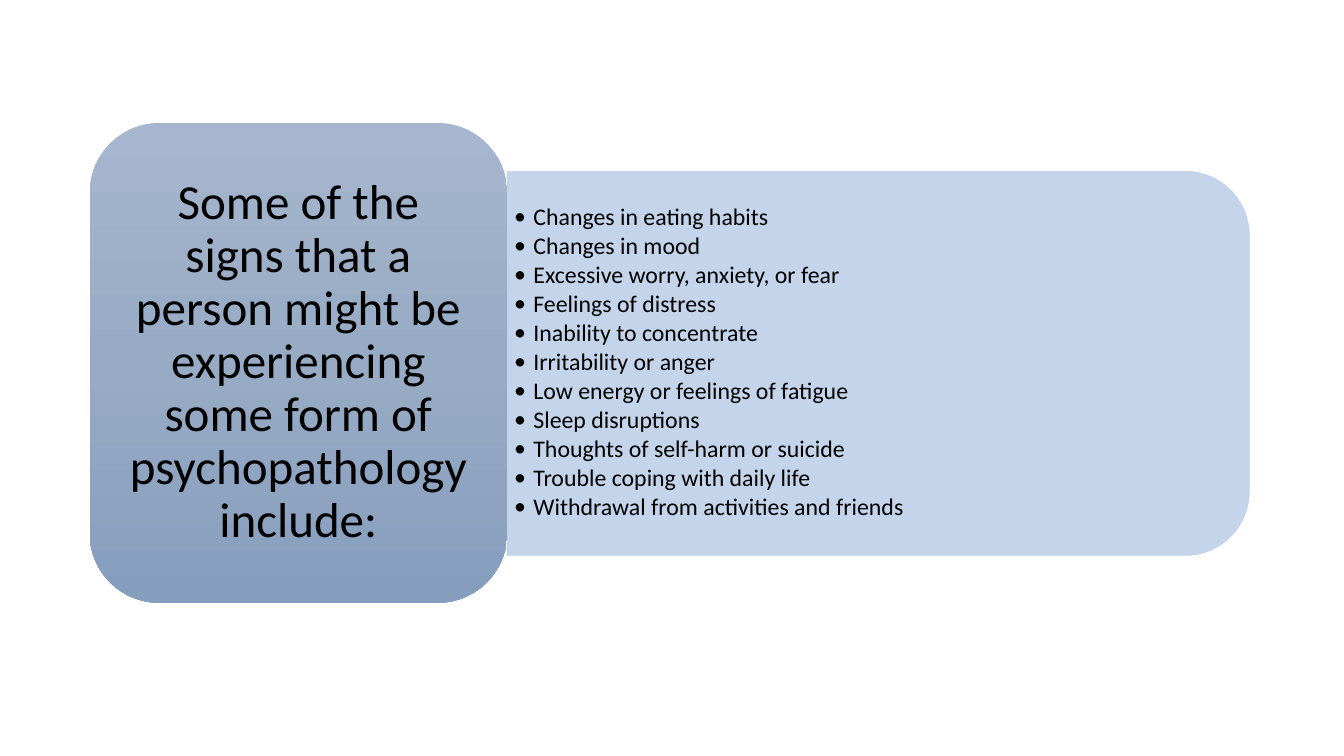
from copy import deepcopy

from pptx import Presentation
from pptx.dml.color import RGBColor
from pptx.enum.shapes import MSO_SHAPE
from pptx.enum.text import MSO_ANCHOR, MSO_AUTO_SIZE, PP_ALIGN
from pptx.oxml.ns import qn
from pptx.util import Inches, Pt
from lxml import etree

ROUNDED = MSO_SHAPE.ROUNDED_RECTANGLE
ROUND_TOP = MSO_SHAPE.ROUND_2_SAME_RECTANGLE
MIDDLE = MSO_ANCHOR.MIDDLE
NO_FIT = MSO_AUTO_SIZE.NONE
LEFT, CENTER = PP_ALIGN.LEFT, PP_ALIGN.CENTER

HEADING = ("Some of the signs that a person might be experiencing "
           "some form of psychopathology include:")
SIGNS = [
    "Changes in eating habits",
    "Changes in mood",
    "Excessive worry,\u00a0anxiety, or fear",
    "Feelings of distress",
    "Inability to concentrate",
    "Irritability or anger",
    "Low energy or feelings of fatigue",
    "Sleep disruptions",
    "Thoughts of\u00a0self-harm\u00a0or suicide",
    "Trouble coping with daily life",
    "Withdrawal from activities and friends",
]
COLORS = {"text": "000000", "panel": "BDD0E9",
          "card_top": "A5B6CE", "card_middle": "98ABC4", "card_bottom": "869EBE"}
FONT = "Calibri"
PANEL_ALPHA = 90
BULLET_INDENT = 0.19

# left, top, width, height in inches
CARD = (0.89, 1.22, 4.14, 4.76)
CARD_TEXT = (1.09, 1.42, 3.74, 4.35)
PANEL = (5.03, 1.7, 7.36, 3.81)
PANEL_TEXT = (5.03, 1.88, 7.17, 3.44)


def rgb(name):
    return RGBColor.from_string(COLORS[name])


def add_backdrop(slide, kind, area):
    """Add a preset shape behind the placeholders."""
    shape = slide.shapes.add_shape(kind, *map(Inches, area))
    shape.shadow.inherit = False
    slide.shapes.title._element.addprevious(shape._element)
    return shape


def add_panel(slide):
    left, top, width, height = PANEL
    # A quarter turn about the centre swaps width and height.
    upright = (left + (width - height) / 2, top + (height - width) / 2, height, width)
    panel = add_backdrop(slide, ROUND_TOP, upright)
    panel.rotation = 90
    panel.fill.solid()
    panel.fill.fore_color.rgb = rgb("panel")
    panel.line.color.rgb = rgb("panel")
    panel.line.width = Pt(0.5)
    for color in panel._element.spPr.iter(qn("a:srgbClr")):
        etree.SubElement(color, qn("a:alpha")).set("val", str(PANEL_ALPHA * 1000))


def add_card(slide):
    card = add_backdrop(slide, ROUNDED, CARD)
    card.line.fill.background()
    card.fill.gradient()
    card.fill.gradient_angle = 270
    first = card._element.spPr.find(".//" + qn("a:gs"))
    first.addnext(deepcopy(first))
    names = ("card_top", "card_middle", "card_bottom")
    for index, (stop, name) in enumerate(zip(card.fill.gradient_stops, names)):
        stop.position = index / 2
        stop.color.rgb = rgb(name)


def add_bullet(para):
    properties = para._p.get_or_add_pPr()
    properties.set("marL", str(Inches(BULLET_INDENT)))
    properties.set("indent", str(-Inches(BULLET_INDENT)))
    etree.SubElement(properties, qn("a:buFont")).set("typeface", FONT)
    etree.SubElement(properties, qn("a:buChar")).set("char", "•")


def fill_text(box, area, lines, size, align, margins, after=0, bullets=False):
    box.left, box.top, box.width, box.height = map(Inches, area)
    frame = box.text_frame
    frame.text = "\n".join(lines)
    frame.word_wrap = True
    frame.auto_size = NO_FIT
    frame.vertical_anchor = MIDDLE
    frame.margin_left = frame.margin_right = Inches(margins[0])
    frame.margin_top = frame.margin_bottom = Inches(margins[1])
    for para in frame.paragraphs:
        if bullets:
            add_bullet(para)
        para.alignment = align
        para.line_spacing = 0.9
        para.space_before = Pt(0)
        para.space_after = Pt(after)
        for span in para.runs:
            span.font.name = FONT
            span.font.size = Pt(size)
            span.font.color.rgb = rgb("text")


def main():
    deck = Presentation()
    deck.slide_width, deck.slide_height = Inches(13.33), Inches(7.5)
    slide = deck.slides.add_slide(deck.slide_layouts[1])
    add_panel(slide)
    add_card(slide)
    fill_text(slide.shapes.title, CARD_TEXT, [HEADING], size=35, align=CENTER,
              margins=(0.15, 0.07))
    fill_text(slide.placeholders[1], PANEL_TEXT, SIGNS, size=17, align=LEFT,
              margins=(0.07, 0.04), after=2.3, bullets=True)
    deck.save("out.pptx")


if __name__ == "__main__":
    main()
